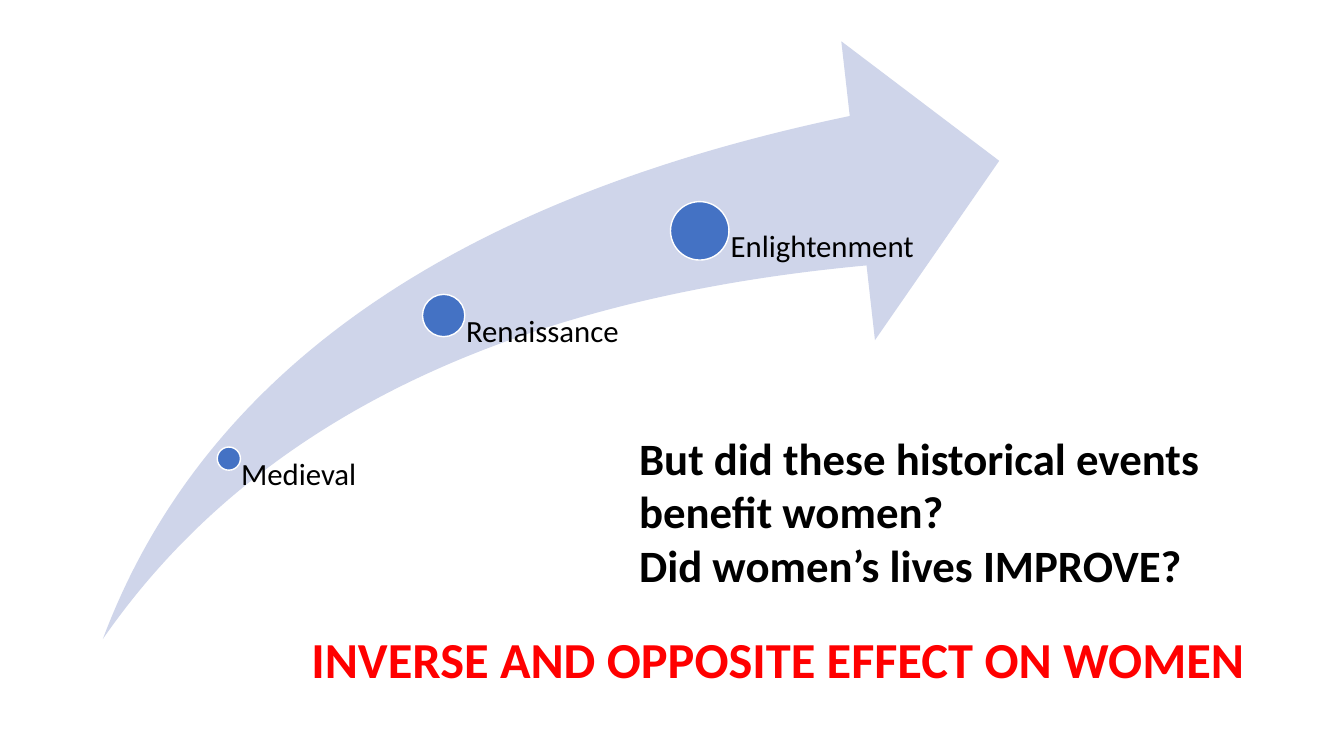
import dataclasses

import pptx
import pptx.dml.color
import pptx.enum.shapes
import pptx.enum.text
import pptx.shapes.autoshape
import pptx.slide
import pptx.util

Inches = pptx.util.Inches
ShapeKind = pptx.enum.shapes.MSO_SHAPE


@dataclasses.dataclass(frozen=True)
class Theme:
    font: str = "Calibri"
    arrow: str = "CFD5EA"
    dot: str = "4472C4"
    outline: str = "FFFFFF"
    text: str = "000000"
    alert: str = "FF0000"
    label_size: int = 22
    question_size: int = 32
    answer_size: int = 36


@dataclasses.dataclass(frozen=True)
class Era:
    name: str
    center_x: float
    center_y: float
    diameter: float
    label_width: float = 2.13


THEME = Theme()
ARROW_BOX = (1.02, 0.41, 8.89, 5.93)
LABEL_BOTTOM = 6.15
LABEL_INSET_RATIO = 0.53  # label inset relative to its dot's diameter
ERAS = (
    Era("Medieval", 2.27, 4.55, 0.23, label_width=2.07),
    Era("Renaissance", 4.4, 3.13, 0.42),
    Era("Enlightenment", 6.94, 2.29, 0.58),
)


def color(value: str) -> pptx.dml.color.RGBColor:
    return pptx.dml.color.RGBColor.from_string(value)


def add_filled_shape(
    slide: pptx.slide.Slide,
    kind: ShapeKind,
    box: tuple[float, float, float, float],
    fill: str,
    outline: str | None = None,
) -> pptx.shapes.autoshape.Shape:
    shape = slide.shapes.add_shape(kind, *map(Inches, box))
    shape.shadow.inherit = False
    shape.fill.solid()
    shape.fill.fore_color.rgb = color(fill)
    if outline is None:
        shape.line.fill.background()
    else:
        shape.line.color.rgb = color(outline)
        shape.line.width = pptx.util.Pt(1)
    return shape


def add_text(
    slide: pptx.slide.Slide,
    box: tuple[float, float, float, float],
    *lines: str,
    size: int,
    text_color: str = THEME.text,
    bold: bool = False,
    wrap: bool = True,
    line_spacing: float = 1.0,
    insets: tuple[float, float, float, float] = (0.1, 0.05, 0.1, 0.05),
) -> None:
    frame = slide.shapes.add_textbox(*map(Inches, box)).text_frame
    frame.word_wrap = wrap
    frame.auto_size = pptx.enum.text.MSO_AUTO_SIZE.NONE
    frame.margin_left, frame.margin_top, frame.margin_right, frame.margin_bottom = map(
        Inches, insets
    )
    frame.text = "\n".join(lines)
    for paragraph in frame.paragraphs:
        paragraph.line_spacing = line_spacing
        font = paragraph.runs[0].font
        font.name = THEME.font
        font.size = pptx.util.Pt(size)
        font.bold = bold
        font.color.rgb = color(text_color)


def add_era(slide: pptx.slide.Slide, era: Era) -> None:
    radius = era.diameter / 2
    dot_box = (era.center_x - radius, era.center_y - radius, era.diameter, era.diameter)
    add_filled_shape(slide, ShapeKind.OVAL, dot_box, THEME.dot, THEME.outline)
    add_text(
        slide,
        (era.center_x, era.center_y, era.label_width, LABEL_BOTTOM - era.center_y),
        era.name,
        size=THEME.label_size,
        line_spacing=0.9,
        insets=(era.diameter * LABEL_INSET_RATIO, 0, 0, 0),
    )


def main() -> None:
    presentation = pptx.Presentation()
    presentation.slide_width = Inches(13.33)
    presentation.slide_height = Inches(7.5)
    slide = presentation.slides.add_slide(presentation.slide_layouts[6])

    # Rising arrow with the eras along it
    arrow = add_filled_shape(slide, ShapeKind.SWOOSH_ARROW, ARROW_BOX, THEME.arrow)
    arrow.adjustments[0] = 0.25
    arrow.adjustments[1] = 0.25
    for era in ERAS:
        add_era(slide, era)

    # Questions and their answer
    add_text(
        slide,
        (6.24, 4.22, 6.68, 1.72),
        "But did these historical events benefit women?",
        "Did women’s lives IMPROVE?",
        size=THEME.question_size,
        bold=True,
    )
    add_text(
        slide,
        (2.99, 6.18, 9.55, 0.71),
        "INVERSE AND OPPOSITE EFFECT ON WOMEN",
        size=THEME.answer_size,
        text_color=THEME.alert,
        bold=True,
        wrap=False,
    )

    presentation.save("out.pptx")


if __name__ == "__main__":
    main()
